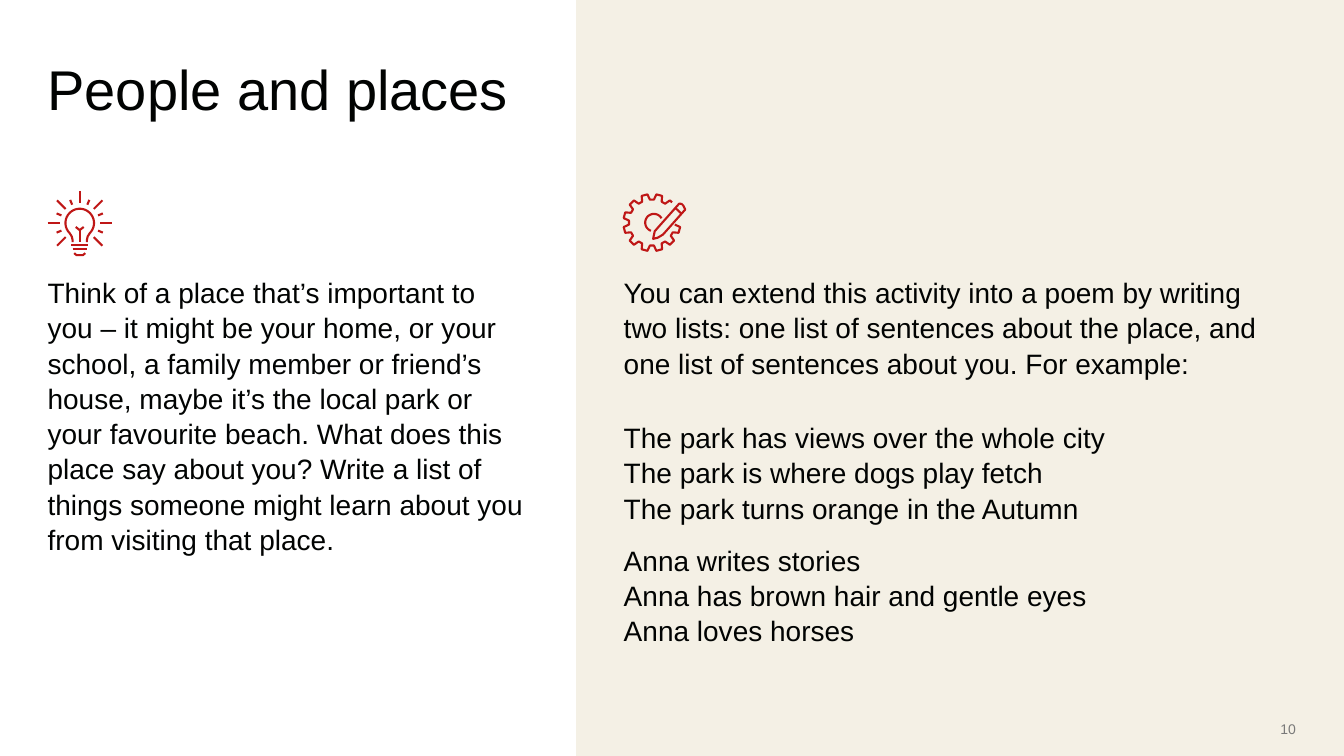
from math import cos, radians, sin

from lxml import etree
from pptx import Presentation
from pptx.dml.color import RGBColor
from pptx.enum import shapes as sh, text as tx
from pptx.oxml.ns import qn
from pptx.util import Cm, Pt

INK, RED, SAND, GREY = "010302", "BF1716", "F4F0E5", "797979"
LEFT, RIGHT, TOP = 1.2, 15.72, 6.9

PLACE = (
    "Think of a place that’s important to you – it might be your home, or your school, "
    "a family member or friend’s house, maybe it’s the local park or your favourite beach. "
    "What does this place say about you? Write a list of things someone might learn about "
    "you from visiting that place."
)
EXTEND = (
    "You can extend this activity into a poem by writing \n"
    "two lists: one list of sentences about the place, and one list of sentences about you. "
    "For example:"
)
PARK = [
    "The park has views over the whole city",
    "The park is where dogs play fetch",
    "The park turns orange in the Autumn",
]
ANNA = ["Anna writes stories", "Anna has brown hair and gentle eyes", "Anna loves horses"]


def color(code):
    return RGBColor.from_string(code)


def add_text(slide, box, lines, size=20, ink=INK, align=tx.PP_ALIGN.LEFT, space=1.05, gap=None):
    """Write one paragraph per line; gap is the index of a line with space above it."""
    frame = slide.shapes.add_textbox(*map(Cm, box)).text_frame
    frame.word_wrap = True
    frame.margin_left = frame.margin_right = frame.margin_top = frame.margin_bottom = 0
    for i, line in enumerate(lines):
        para = frame.add_paragraph() if i else frame.paragraphs[0]
        para.text = line
        para.alignment = align
        para.line_spacing = space
        if i == gap:
            para.space_before = Pt(12)
        para.font.name = "Arial"
        para.font.size = Pt(size)
        para.font.color.rgb = color(ink)


def add_panel(slide, box, fill):
    panel = slide.shapes.add_shape(sh.MSO_SHAPE.RECTANGLE, *map(Cm, box))
    panel.shadow.inherit = False
    panel.fill.solid()
    panel.fill.fore_color.rgb = color(fill)
    panel.line.fill.background()


def set_pen(line):
    line.color.rgb = color(RED)
    line.width = Pt(1.5)


def polar(radius, angle):
    """Give a point in cm; angles run clockwise from the right, in degrees."""
    return radius * cos(radians(angle)), radius * sin(radians(angle))


def place(mid, point):
    return Cm(mid[0] + point[0]), Cm(mid[1] + point[1])


def add_line(slide, mid, start, end):
    line = slide.shapes.add_connector(
        sh.MSO_CONNECTOR.STRAIGHT, *place(mid, start), *place(mid, end)
    )
    set_pen(line.line)
    props = line._element.find(qn("p:spPr"))
    etree.SubElement(props, qn("a:effectLst"))


def add_path(slide, mid, points, close=False):
    spots = [place(mid, point) for point in points]
    pen = slide.shapes.build_freeform(*spots[0])
    pen.add_line_segments(spots[1:], close=close)
    path = pen.convert_to_shape()
    path.shadow.inherit = False
    path.fill.background()
    set_pen(path.line)


def add_bulb(slide, mid):
    for step in range(16):
        if step not in (3, 4, 5):
            reach = 0.63 if step % 2 else 0.81
            angle = step * 22.5
            add_line(slide, mid, polar(reach, angle), polar(0.5, angle))
    neck = [(0.18, 0.48), (0.18, 0.43), (0.2, 0.34)]
    dome = [polar(0.36, angle) for angle in range(45, -226, -10)]
    add_path(slide, mid, neck + dome + [(-x, y) for x, y in reversed(neck)])
    add_path(slide, mid, [(-0.1, 0.1), (0, 0.18), (0.1, 0.1)])
    add_line(slide, mid, (0, 0.18), (0, 0.48))
    for half, y in ((0.21, 0.56), (0.18, 0.66)):
        add_line(slide, mid, (-half, y), (half, y))
    add_path(slide, mid, [(-0.14, 0.76), (-0.08, 0.81), (0.08, 0.81), (0.14, 0.76)])


def add_gear(slide, mid):
    """Draw a gear of twelve teeth, one left out for the pencil."""
    rim = [polar(0.72, -45)]
    for tooth in range(-45, -346, -30):
        corners = ((0.58, 10), (0.72, 6), (0.72, -6), (0.58, -10))
        rim += [polar(radius, tooth + turn) for radius, turn in corners]
    add_path(slide, mid, rim[:1] + rim[3:])
    hub = (mid[0] + 0.05, mid[1])
    add_path(slide, hub, [polar(0.22, angle) for angle in range(110, 331, 10)])
    pencil = [
        (0.79, -0.43), (0.75, -0.47), (0.69, -0.48), (0.13, 0.15), (0.07, 0.22),
        (0.03, 0.41), (0.15, 0.38), (0.28, 0.3), (0.84, -0.33),
    ]
    add_path(slide, mid, pencil, close=True)
    add_line(slide, mid, (0.58, -0.38), (0.74, -0.23))


def main():
    deck = Presentation()
    deck.slide_width, deck.slide_height = Cm(33.87), Cm(19.05)
    slide = deck.slides.add_slide(deck.slide_layouts[6])
    add_panel(slide, (14.52, 0, 19.35, 19.05), SAND)
    add_text(slide, (LEFT, 1.2, 28.7, 2.36), ["People and places"], size=40, space=1.1)
    add_bulb(slide, (2.01, 5.62))
    add_text(slide, (LEFT, TOP, 12.12, 6.83), [PLACE])
    add_gear(slide, (16.43, 5.61))
    add_text(slide, (RIGHT, TOP, 16.95, 2.56), [EXTEND])
    add_text(slide, (RIGHT, 10.56, 16.95, 5.56), PARK + ANNA, gap=len(PARK))
    add_text(slide, (30.5, 18.13, 2.16, 0.43), ["10"], size=10, ink=GREY,
             align=tx.PP_ALIGN.RIGHT)
    deck.save("out.pptx")


if __name__ == "__main__":
    main()
